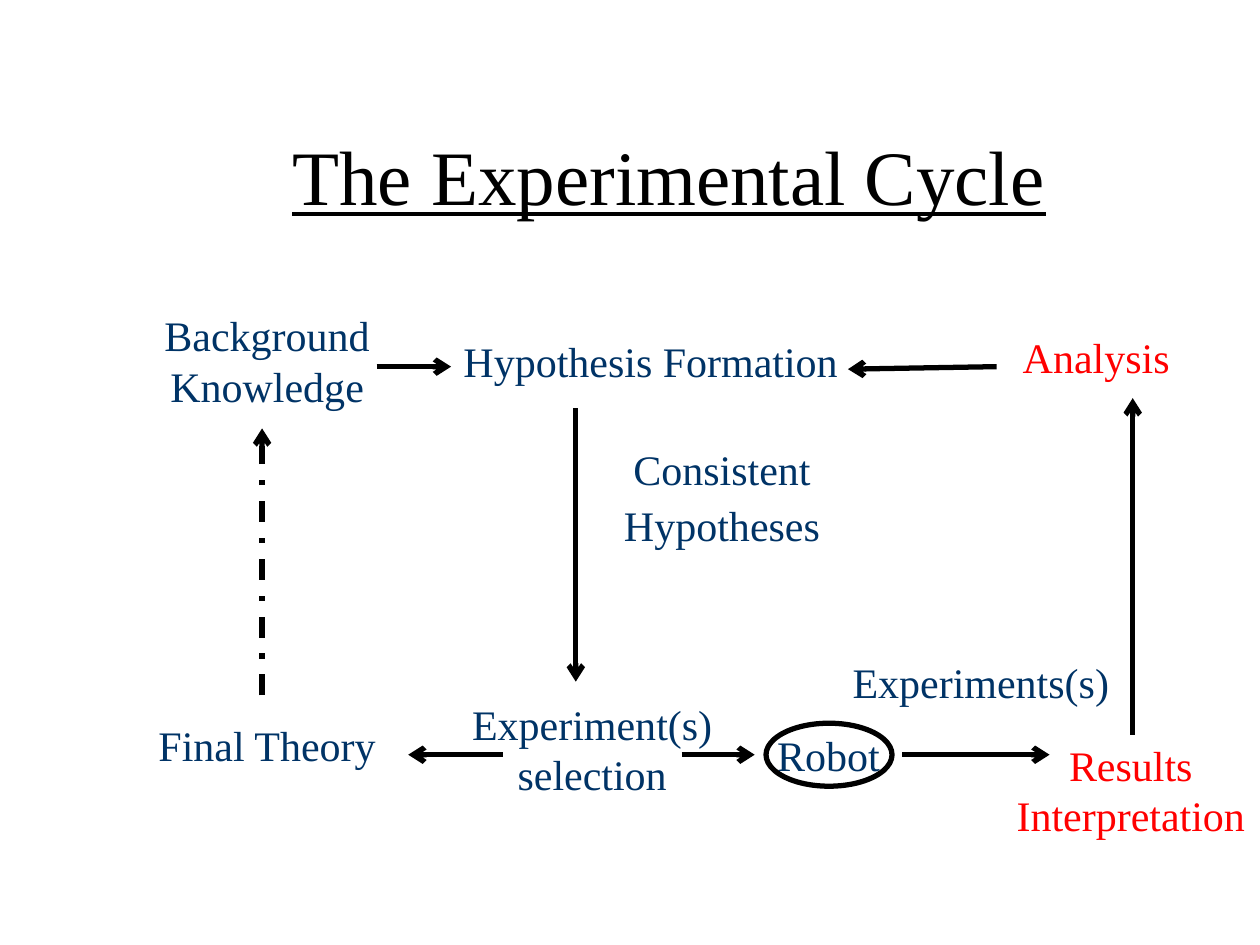
from dataclasses import dataclass
from typing import Any

from lxml import etree
from pptx import Presentation
from pptx import util as u
from pptx.dml.color import RGBColor
from pptx.enum import dml, shapes, text
from pptx.oxml import ns

COLORS = {"ink": "000000", "navy": "003366", "red": "FF0000"}


def write(tf, lines, size=24, color="navy", font="Times New Roman", underline=None,
          align=text.PP_ALIGN.CENTER, spacing=None, gap=0):
    for i, line in enumerate(lines):
        p = tf.paragraphs[0] if i == 0 else tf.add_paragraph()
        p.alignment = align
        p.line_spacing = spacing
        p.space_before = u.Pt(gap if i else 0)
        r = p.add_run()
        r.text = line
        r.font.name = font
        r.font.size = u.Pt(size)
        r.font.underline = underline
        r.font.color.rgb = RGBColor.from_string(COLORS[color])


@dataclass
class Diagram:
    s: Any
    line_width: float = 3
    line_color: str = "ink"

    def stroke(self, line):
        line.width = u.Pt(self.line_width)
        line.color.rgb = RGBColor.from_string(COLORS[self.line_color])

    def label(self, box, *lines, wrap=True, **fmt):
        sp = self.s.shapes.add_textbox(*map(u.Inches, box))
        tf = sp.text_frame
        tf.word_wrap = wrap
        tf.vertical_anchor = text.MSO_ANCHOR.MIDDLE
        write(tf, lines, **fmt)

    def arrow(self, start, end, dash=None):
        sp = self.s.shapes.add_connector(
            shapes.MSO_CONNECTOR.STRAIGHT, *map(u.Inches, start + end))
        self.stroke(sp.line)
        if dash:
            sp.line.dash_style = dash
        etree.SubElement(sp.line._get_or_add_ln(), ns.qn("a:tailEnd"), type="arrow")
        etree.SubElement(sp._element.spPr, ns.qn("a:effectLst"))

    def ring(self, box):
        sp = self.s.shapes.add_shape(shapes.MSO_SHAPE.OVAL, *map(u.Inches, box))
        sp.shadow.inherit = False
        sp.fill.background()
        self.stroke(sp.line)


def main():
    """Build the experimental cycle slide."""
    prs = Presentation()
    prs.slide_width, prs.slide_height = u.Inches(10), u.Inches(7.5)
    d = Diagram(prs.slides.add_slide(prs.slide_layouts[6]))

    d.label((1.06, 0.76, 8.5, 1.25), "The Experimental Cycle",
            size=44, color="ink", underline=True)
    d.label((0.83, 2.41, 2.58, 0.9), "Background Knowledge")
    d.label((3.58, 2.61, 3.17, 0.5), "Hypothesis Formation",
            wrap=False, align=text.PP_ALIGN.LEFT)
    d.label((7.66, 2.58, 2.08, 0.5), "Analysis", color="red")
    d.label((4.44, 3.56, 2.58, 0.86), "Consistent", "Hypotheses", spacing=0.7, gap=12)
    d.label((0.91, 5.66, 2.42, 0.5), "Final Theory")
    d.label((3.24, 5.49, 2.92, 0.9), "Experiment(s) selection")
    d.label((5.66, 5.74, 1.83, 0.5), "Robot")
    d.label((6.66, 5.16, 2.25, 0.5), "Experiments(s)")
    d.label((7.68, 5.82, 2.59, 0.9), "Results", "Interpretation", color="red")
    d.ring((6.08, 5.74, 1, 0.5))

    top, bottom = 2.91, 5.99
    d.arrow((2.99, top), (3.58, top))
    d.arrow((7.91, top), (6.73, 2.93))
    for x1, x2 in ((3.99, 3.24), (5.41, 5.99), (7.16, 8.33)):
        d.arrow((x1, bottom), (x2, bottom))
    for x, y1, y2, dash in ((4.57, 3.24, 5.41, None), (8.99, 5.83, 3.16, None),
                            (2.08, 5.52, 3.4, dml.MSO_LINE.DASH_DOT)):
        d.arrow((x, y1), (x, y2), dash)

    prs.save("out.pptx")


if __name__ == "__main__":
    main()
